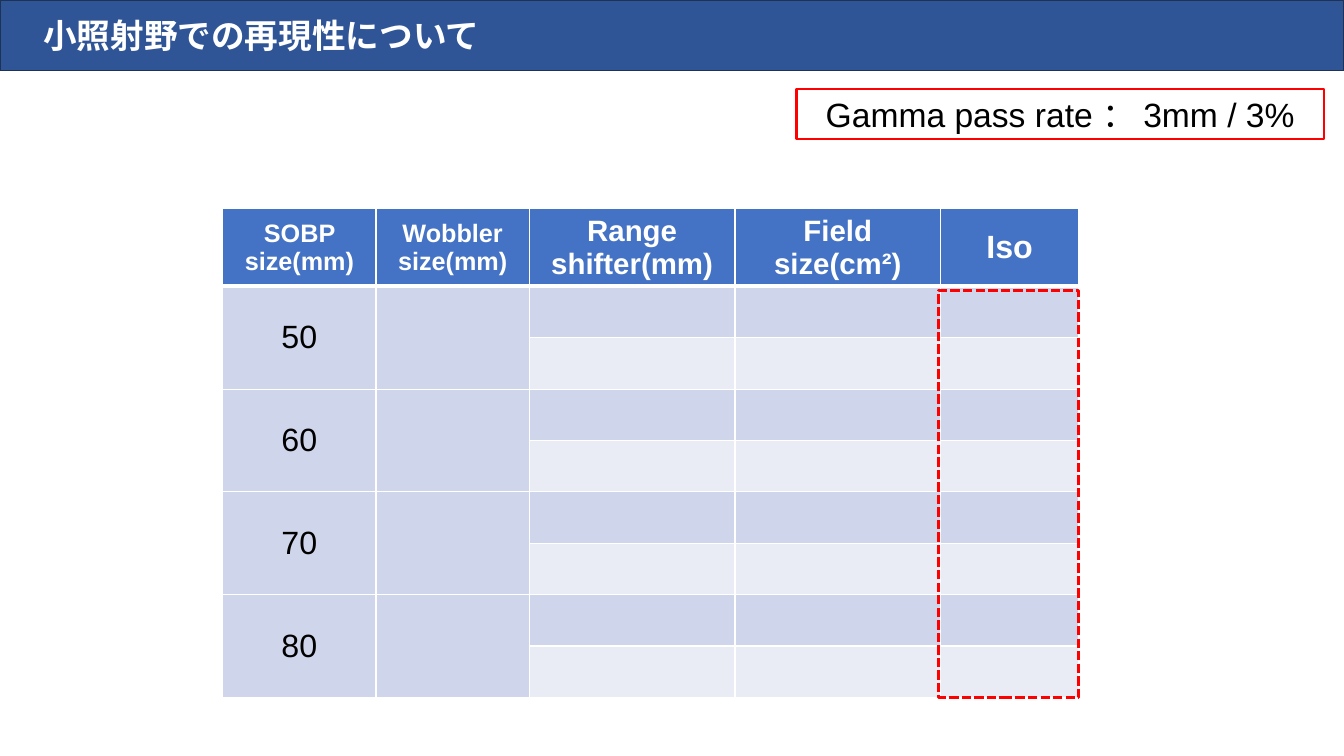
from lxml.etree import SubElement
from pptx import Presentation
from pptx.dml.color import RGBColor
from pptx.enum.dml import MSO_LINE
from pptx.enum.shapes import MSO_SHAPE
from pptx.enum.text import MSO_ANCHOR, MSO_AUTO_SIZE, PP_ALIGN
from pptx.oxml.ns import qn
from pptx.util import Inches, Pt

# Content
TITLE = "小照射野での再現性について"
RATE = "Gamma pass rate ： 3mm / 3%"
HEADS = [  # text, font size, column width
    ("SOBP size(mm)", 18, 1.52),
    ("Wobbler size(mm)", 18, 1.52),
    ("Range shifter(mm)", 21, 2.04),
    ("Field size(cm²)", 21, 2.04),
    ("Iso", 23, 1.37),
]
SIZES = ["50", "60", "70", "80"]
HEAD_H, ROW_H = 0.63, 0.51
BLUE, DARK, LIGHT = "4472C4", "CFD5EA", "E9EBF5"
WHITE, BLACK, RED = "FFFFFF", "000000", "FF0000"


def color(code):
    return RGBColor.from_string(code)


def write(frame, text, size, code, bold=False, align=PP_ALIGN.CENTER):
    frame.word_wrap = True
    para = frame.paragraphs[0]
    para.text = text
    para.alignment = align
    para.font.name = "Arial"
    para.font.size = Pt(size)
    para.font.bold = bold
    para.font.color.rgb = color(code)


def add_box(area, line, width, fill=None):
    box = slide.shapes.add_shape(MSO_SHAPE.RECTANGLE, *map(Inches, area))
    box.shadow.inherit = False
    if fill:
        box.fill.solid()
        box.fill.fore_color.rgb = color(fill)
    else:
        box.fill.background()
    box.line.color.rgb = color(line)
    box.line.width = Pt(width)
    return box


def style(cell, fill, base=1):
    props = cell._tc.get_or_add_tcPr()
    for side, width in (("L", 1), ("R", 1), ("T", 1), ("B", base)):
        line = SubElement(props, qn(f"a:ln{side}"), w=str(Pt(width)))
        solid = SubElement(line, qn("a:solidFill"))
        SubElement(solid, qn("a:srgbClr"), val=WHITE)
    cell.fill.solid()
    cell.fill.fore_color.rgb = color(fill)
    cell.vertical_anchor = MSO_ANCHOR.MIDDLE
    cell.margin_left = cell.margin_right = Inches(0.11)
    cell.margin_top = cell.margin_bottom = Inches(0.06)


deck = Presentation()
deck.slide_width, deck.slide_height = Inches(13.33), Inches(7.5)
slide = deck.slides.add_slide(deck.slide_layouts[6])

# Title bar
bar = add_box((0, 0, 13.33, 0.7), "1E3256", 1, "2F5597")
bar.text_frame.margin_left = Inches(0.43)
bar.text_frame.vertical_anchor = MSO_ANCHOR.MIDDLE
write(bar.text_frame, TITLE, 24, WHITE, True, PP_ALIGN.LEFT)

# Table: each size spans two rows
count = 2 * len(SIZES) + 1
wide = sum(head[2] for head in HEADS)
tall = HEAD_H + ROW_H * (count - 1)
table = slide.shapes.add_table(
    count, len(HEADS), *map(Inches, (2.21, 2.07, wide, tall))).table
for num, row in enumerate(table.rows):
    row.height = Inches(ROW_H if num else HEAD_H)

for col, (text, size, width) in enumerate(HEADS):
    table.columns[col].width = Inches(width)
    style(table.cell(0, col), BLUE, 3)
    write(table.cell(0, col).text_frame, text, size, WHITE, True)
    for num in range(1, count):
        style(table.cell(num, col), DARK if num % 2 or col < 2 else LIGHT)

for num, text in enumerate(SIZES):
    top = 2 * num + 1
    for col in (0, 1):
        table.cell(top, col).merge(table.cell(top + 1, col))
    write(table.cell(top, 0).text_frame, text, 23, BLACK)

# Dashed frame around the Iso column
mark = add_box((9.31, 2.88, 1.39, 4.04), RED, 2.25)
mark.line.dash_style = MSO_LINE.SQUARE_DOT

# Pass rate label
label = add_box((7.9, 0.88, 5.23, 0.5), RED, 1.5)
label.text_frame.auto_size = MSO_AUTO_SIZE.SHAPE_TO_FIT_TEXT
label.text_frame.vertical_anchor = MSO_ANCHOR.TOP
write(label.text_frame, RATE, 24, BLACK)

deck.save("out.pptx")
